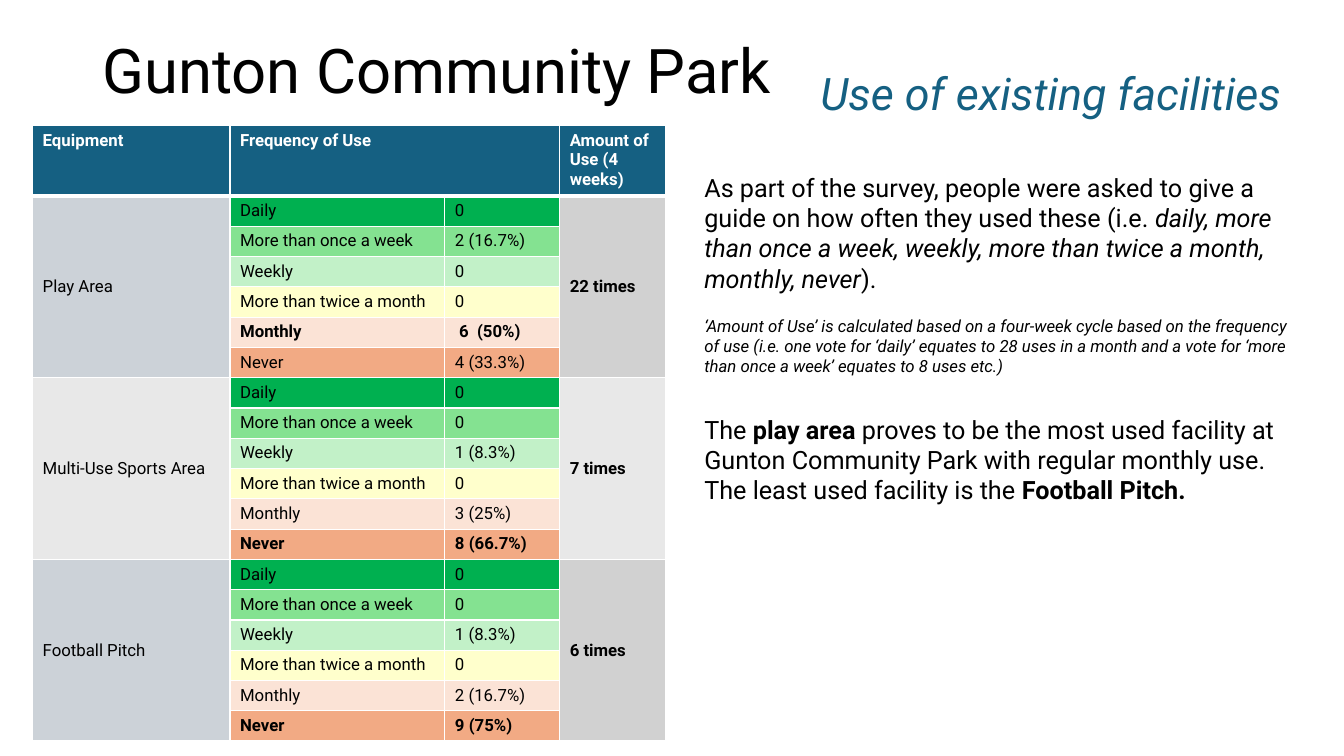
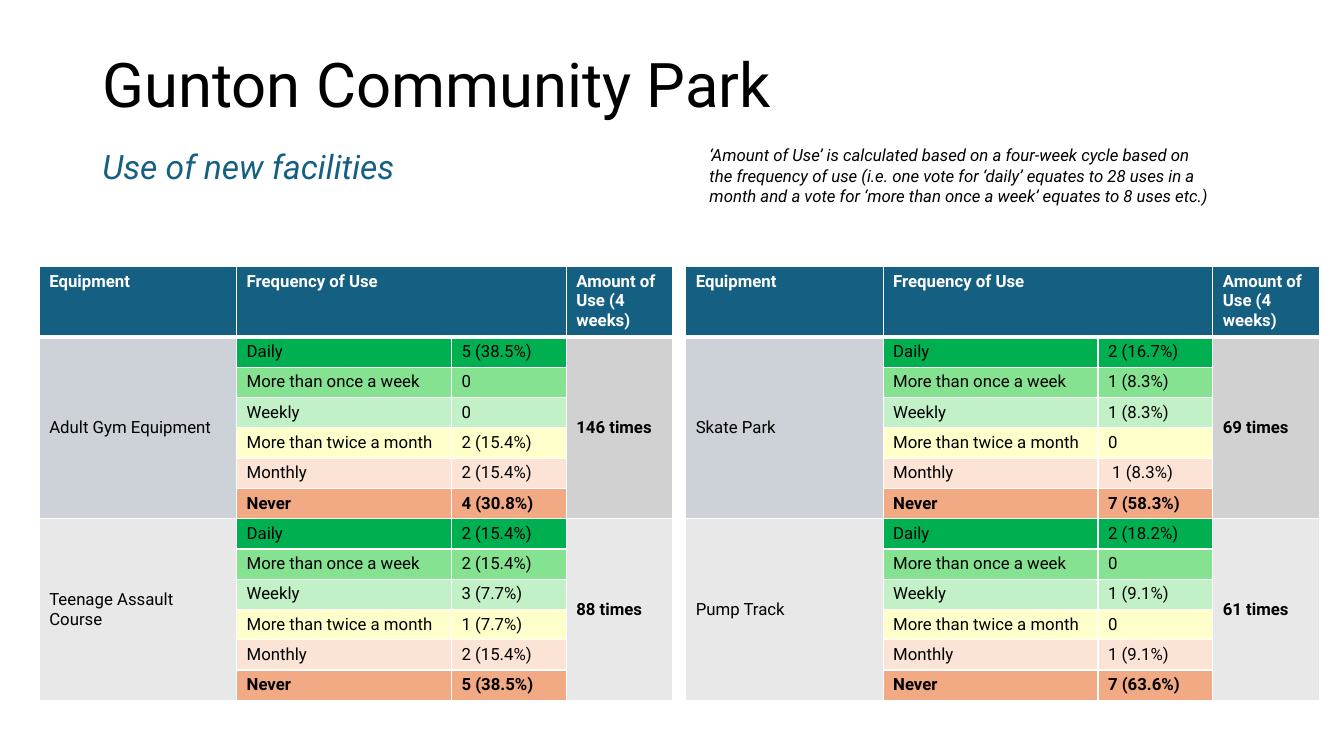
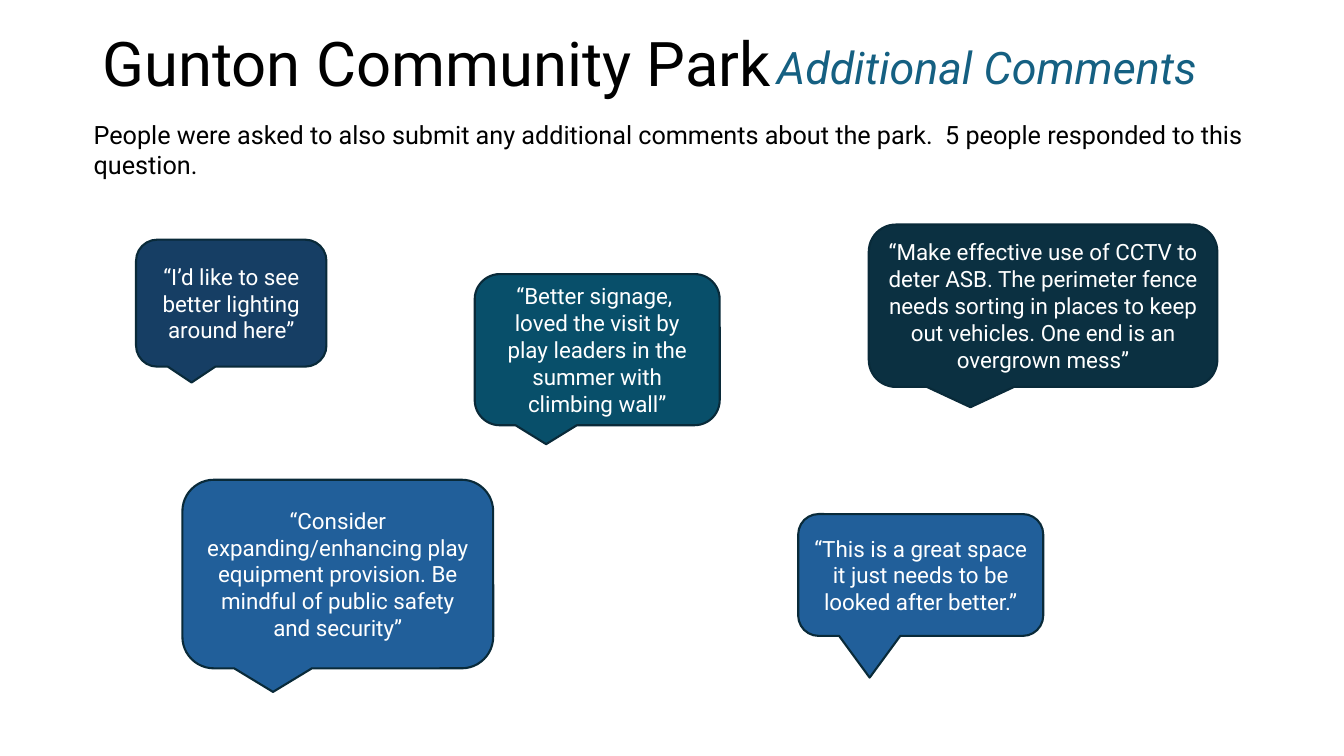
from lxml import etree
from pptx import Presentation
from pptx.dml.color import RGBColor
from pptx.enum.shapes import MSO_SHAPE
from pptx.enum.text import MSO_ANCHOR, PP_ALIGN
from pptx.oxml.ns import qn
from pptx.util import Pt

CALLOUT = MSO_SHAPE.ROUNDED_RECTANGULAR_CALLOUT
TOP, MIDDLE = MSO_ANCHOR.TOP, MSO_ANCHOR.MIDDLE
LEFT, CENTER = PP_ALIGN.LEFT, PP_ALIGN.CENTER

BLACK = RGBColor(0x00, 0x00, 0x00)
WHITE = RGBColor(0xFF, 0xFF, 0xFF)
TEAL = RGBColor(0x15, 0x60, 0x82)
OUTLINE = RGBColor(0x09, 0x2A, 0x39)
BLUE = RGBColor(0x21, 0x5F, 0x9A)
NAVY = RGBColor(0x16, 0x3E, 0x64)
INK = RGBColor(0x0B, 0x30, 0x41)
PETROL = RGBColor(0x08, 0x4F, 0x6A)
LIGHT_GRAY = RGBColor(0xE8, 0xE8, 0xE8)
GROUP_FILLS = [
    (RGBColor(0xCC, 0xD2, 0xD8), RGBColor(0xD1, 0xD1, 0xD1)),
    (LIGHT_GRAY, LIGHT_GRAY),
]
FREQUENCIES = [
    ("Daily", RGBColor(0x00, 0xB0, 0x50)),
    ("More than once a week", RGBColor(0x84, 0xE2, 0x91)),
    ("Weekly", RGBColor(0xC2, 0xF1, 0xC8)),
    ("More than twice a month", RGBColor(0xFF, 0xFF, 0xCC)),
    ("Monthly", RGBColor(0xFB, 0xE3, 0xD6)),
    ("Never", RGBColor(0xF2, 0xAA, 0x84)),
]
MONTHLY, NEVER = 4, 5
HEADINGS = ["Equipment", "Frequency of Use", "", "Amount of Use (4 weeks)"]
COLUMN_WIDTHS = [141, 153.5, 82, 76]
HEADER_HEIGHT, ROW_HEIGHT = 49.5, 21.65
NOTE = (
    "‘Amount of Use’ is calculated based on a four-week cycle based on the "
    "frequency of use (i.e. one vote for ‘daily’ equates to 28 uses in a month "
    "and a vote for ‘more than once a week’ equates to 8 uses etc.)"
)

EXISTING = [
    ("Play Area", ["0", "2 (16.7%)", "0", "0", " 6  (50%)", "4 (33.3%)"], MONTHLY, "22 times"),
    ("Multi-Use Sports Area", ["0", "0", "1 (8.3%)", "0", "3 (25%)", "8 (66.7%)"], NEVER, "7 times"),
    ("Football Pitch", ["0", "0", "1 (8.3%)", "0", "2 (16.7%)", "9 (75%)"], NEVER, "6 times"),
]
NEW_LEFT = [
    ("Adult Gym Equipment",
     ["5 (38.5%)", "0", "0", "2 (15.4%)", "2 (15.4%)", "4 (30.8%)"], NEVER, "146 times"),
    ("Teenage Assault Course",
     ["2 (15.4%)", "2 (15.4%)", "3 (7.7%)", "1 (7.7%)", "2 (15.4%)", "5 (38.5%)"], NEVER, "88 times"),
]
NEW_RIGHT = [
    ("Skate Park",
     ["2 (16.7%)", "1 (8.3%)", "1 (8.3%)", "0", " 1 (8.3%)", "7 (58.3%)"], NEVER, "69 times"),
    ("Pump Track",
     ["2 (18.2%)", "0", "1 (9.1%)", "0", "1 (9.1%)", "7 (63.6%)"], NEVER, "61 times"),
]
COMMENTS = [
    (130.3, 342.7, 222, 134.7, BLUE, 0.625,
     "“Consider expanding/enhancing play equipment provision. Be mindful of public safety and security”"),
    (97.2, 171.2, 136, 90.7, NAVY, 0.625, "“I’d like to see better lighting around here”"),
    (620.6, 160.4, 249, 116, INK, 0.625,
     "“Make effective use of CCTV to deter ASB. The perimeter fence needs sorting in places "
     "to keep out vehicles. One end is an overgrown mess”"),
    (570.2, 367.2, 175, 87, BLUE, 0.843,
     "“This is a great space it just needs to be looked after better.”"),
    (339.1, 195.8, 175, 108, PETROL, 0.625,
     "“Better signage,  loved the visit by play leaders in the summer with climbing wall”"),
]


class ReportDeck:
    """Holds the report style and the slide being filled."""

    font = "Roboto"

    def __init__(self):
        self.deck = Presentation()
        self.deck.slide_width = Pt(960)
        self.deck.slide_height = Pt(540)

    def add_page(self, title_top, subtitle, left, top, size):
        self.page = self.deck.slides.add_slide(self.deck.slide_layouts[6])
        title = self.add_text(66, title_top, 828, 104.4, "Gunton Community Park", 44, anchor=MIDDLE)
        title.paragraphs[0].line_spacing = 0.9
        self.add_text(left, top, 394.6, size * 1.44, subtitle, size, TEAL, italic=True)

    def add_span(self, para, text, size, color=BLACK, bold=False, italic=False):
        span = para.add_run()
        span.text = text
        font = span.font
        font.name, font.size, font.bold, font.italic = self.font, Pt(size), bold, italic
        font.color.rgb = color

    def add_text(self, left, top, width, height, text, size, color=BLACK, italic=False, anchor=TOP):
        box = self.page.shapes.add_textbox(Pt(left), Pt(top), Pt(width), Pt(height))
        frame = box.text_frame
        frame.word_wrap = True
        frame.vertical_anchor = anchor
        if text:
            self.add_span(frame.paragraphs[0], text, size, color, italic=italic)
        return frame

    def add_callout(self, left, top, width, height, fill, tail, text):
        box = self.page.shapes.add_shape(CALLOUT, Pt(left), Pt(top), Pt(width), Pt(height))
        box.adjustments[1] = tail
        box.shadow.inherit = False
        box.fill.solid()
        box.fill.fore_color.rgb = fill
        box.line.color.rgb = OUTLINE
        box.line.width = Pt(1.5)
        frame = box.text_frame
        frame.word_wrap = True
        frame.vertical_anchor = MIDDLE
        para = frame.paragraphs[0]
        para.alignment = CENTER
        self.add_span(para, text, 16, WHITE)

    def style_cell(self, cell, fill, text="", color=BLACK, bold=False, anchor=TOP, bottom=1):
        properties = cell._tc.get_or_add_tcPr()
        for side, width in (("L", 1), ("R", 1), ("T", 1), ("B", bottom)):
            line = etree.SubElement(properties, qn(f"a:ln{side}"), w=str(Pt(width)))
            solid = etree.SubElement(line, qn("a:solidFill"))
            etree.SubElement(solid, qn("a:srgbClr"), val=str(WHITE))
        cell.fill.solid()
        cell.fill.fore_color.rgb = fill
        cell.vertical_anchor = anchor
        para = cell.text_frame.paragraphs[0]
        para.alignment = LEFT
        if text:
            self.add_span(para, text, 12, color, bold)

    def add_usage_table(self, left, top, groups):
        count = len(FREQUENCIES)
        row_total = 1 + count * len(groups)
        height = HEADER_HEIGHT + ROW_HEIGHT * (row_total - 1)
        table = self.page.shapes.add_table(
            row_total, 4, Pt(left), Pt(top), Pt(sum(COLUMN_WIDTHS)), Pt(height)).table
        table.horz_banding = False
        for column, width in zip(table.columns, COLUMN_WIDTHS):
            column.width = Pt(width)
        for index, row in enumerate(table.rows):
            row.height = Pt(ROW_HEIGHT if index else HEADER_HEIGHT)
        for index, heading in enumerate(HEADINGS):
            self.style_cell(table.cell(0, index), TEAL, heading, WHITE, True, bottom=3)
        table.cell(0, 1).merge(table.cell(0, 2))
        for number, (name, votes, peak, total) in enumerate(groups):
            first = 1 + number * count
            name_fill, total_fill = GROUP_FILLS[number % 2]
            for step, ((label, fill), vote) in enumerate(zip(FREQUENCIES, votes)):
                row, bold, start = first + step, step == peak, step == 0
                self.style_cell(table.cell(row, 0), name_fill, name if start else "", anchor=MIDDLE)
                self.style_cell(table.cell(row, 1), fill, label, bold=bold)
                self.style_cell(table.cell(row, 2), fill, vote, bold=bold)
                self.style_cell(table.cell(row, 3), total_fill, total if start else "",
                                bold=True, anchor=MIDDLE)
            for column in (0, 3):
                table.cell(first, column).merge(table.cell(first + count - 1, column))


def build_existing(report):
    report.add_page(0, "Use of existing facilities", 578.9, 43.2, 32)
    frame = report.add_text(496, 119.5, 440.6, 269.3, "", 18)
    question = frame.paragraphs[0]
    report.add_span(question, "As part of the survey, people were asked to give a guide on how "
                    "often they used these (i.e. ", 18)
    report.add_span(question, "daily, more than once a week, weekly, more than twice a month, "
                    "monthly, never", 18, italic=True)
    report.add_span(question, ").", 18)
    finding = frame.add_paragraph()
    finding.space_before = Pt(86.4)
    report.add_span(finding, "The ", 18)
    report.add_span(finding, "play area ", 18, bold=True)
    report.add_span(finding, "proves to be the most used facility at Gunton Community Park with "
                    "regular monthly use.  The least used facility is the ", 18)
    report.add_span(finding, "Football Pitch.", 18, bold=True)
    report.add_usage_table(23.3, 89.6, EXISTING)
    report.add_text(496, 221.8, 440.6, 51, NOTE, 12, italic=True)


def build_new(report):
    report.add_page(10, "Use of new facilities", 66, 100.8, 24)
    report.add_text(499.7, 100.1, 375.8, 51, NOTE, 12, italic=True)
    for left, groups in ((28, NEW_LEFT), (489.8, NEW_RIGHT)):
        report.add_usage_table(left, 190.3, groups)


def build_comments(report):
    report.add_page(-5, "Additional Comments", 547.9, 24.5, 32)
    report.add_text(59.8, 81.4, 866.9, 51, "People were asked to also submit any additional "
                    "comments about the park.  5 people responded to this question.", 18)
    for comment in COMMENTS:
        report.add_callout(*comment)


def main():
    report = ReportDeck()
    build_existing(report)
    build_new(report)
    build_comments(report)
    report.deck.save("out.pptx")


if __name__ == "__main__":
    main()
